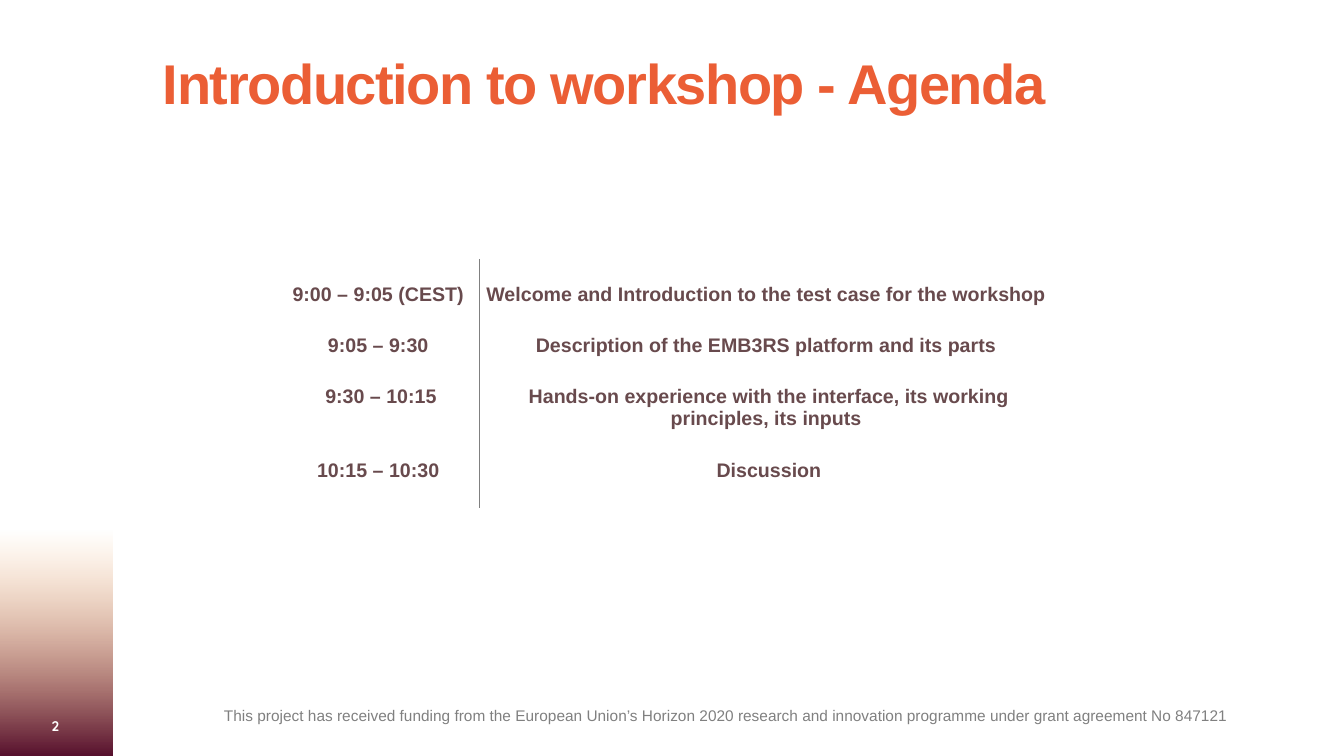
import pptx
import pptx.util
import pptx.dml.color
import pptx.enum.shapes
import pptx.enum.text
import pptx.oxml
import pptx.oxml.ns

PX = 914400 / 100.8
THEME = {
    "font": "Arial", "number_font": "Quicksand",
    "title": "EB5E35", "agenda": "684A4D", "grey": "808080",
    "white": "FFFFFF", "wine": "57102D", "amber": "F5A04B",
    "title_size": 40, "agenda_size": 14, "footer_size": 11, "number_size": 10,
}
FOOTER = ("This project has received funding from the European Union’s Horizon 2020 "
          "research and innovation programme under grant agreement No 847121")
AGENDA = [
    ("9:00 – 9:05 (CEST) ", "Welcome and Introduction to the test case for the workshop ", 72),
    ("9:05 – 9:30 ", "Description of the EMB3RS platform and its parts ", 51),
    ("9:30 – 10:15", "Hands-on experience with the interface, its working principles, its inputs ", 74),
    ("10:15 – 10:30 ", "Discussion", 51),
]
ALIGN = pptx.enum.text.PP_ALIGN
ANCHOR = pptx.enum.text.MSO_ANCHOR


def px(n):
    return pptx.util.Emu(round(n * PX))


def write(p, text, size, color, bold=True, font="font", align=ALIGN.LEFT):
    p.alignment = align
    r = p.add_run()
    r.text = text
    look = {"name": THEME[font], "size": pptx.util.Pt(THEME[size]), "bold": bold}
    for key, value in look.items():
        setattr(r.font, key, value)
    r.font.color.rgb = pptx.dml.color.RGBColor.from_string(THEME[color])
    return r


prs = pptx.Presentation()
prs.slide_width, prs.slide_height = px(1344), px(756)
s = prs.slides.add_slide(prs.slide_layouts[6])

band = s.shapes.add_shape(pptx.enum.shapes.MSO_SHAPE.RECTANGLE, px(0), px(530), px(113), px(226))
band.shadow.inherit = False
band.line.fill.background()
band.fill.gradient()
band.fill.gradient_angle = 90
for stop, color, position in zip(band.fill.gradient_stops, ("wine", "amber"), (0, 1)):
    stop.color.rgb = pptx.dml.color.RGBColor.from_string(THEME[color])
    stop.position = position
amber = band.element.xpath(".//a:gs/a:srgbClr")[-1]
amber.append(pptx.oxml.parse_xml(f'<a:alpha {pptx.oxml.ns.nsdecls("a")} val="0"/>'))

boxes = [
    ((18, 706, 75, 40), (10, 5, 10, 5), ANCHOR.MIDDLE,
     ("2", "number_size", "white", True, "number_font", ALIGN.CENTER)),
    ((224, 702, 1037, 26), (0, 4, 24, 4), ANCHOR.TOP, (FOOTER, "footer_size", "grey", False)),
    ((163, 40, 1160, 146), (0, 21, 0, 0), ANCHOR.TOP,
     ("Introduction to workshop - Agenda", "title_size", "title")),
]
for place, insets, anchor, content in boxes:
    tf = s.shapes.add_textbox(*map(px, place)).text_frame
    tf.word_wrap = True
    tf.vertical_anchor = anchor
    for side, inset in zip(("left", "top", "right", "bottom"), insets):
        setattr(tf, f"margin_{side}", px(inset))
    r = write(tf.paragraphs[0], *content)
tf.paragraphs[0].line_spacing = 0.8
r.font._element.set("spc", "-100")

frame = s.shapes.add_table(len(AGENDA), 2, px(283), px(259), px(776), px(248))
table = frame.table
table.first_row = table.horz_banding = False
frame.element.xpath(".//a:tableStyleId")[0].text = "{2D5ABB26-0587-4C30-8999-92F81FD0307C}"
for column, width in zip(table.columns, (196, 580)):
    column.width = px(width)
for i, (time, topic, height) in enumerate(AGENDA):
    table.rows[i].height = px(height)
    for j, (text, edge) in enumerate(((time, "lnR"), (topic, "lnL"))):
        cell = table.cell(i, j)
        margins = {"left": 6, "right": 6, "top": 3 if i else 25, "bottom": 24}
        for side, margin in margins.items():
            setattr(cell, f"margin_{side}", px(margin))
        cell.vertical_anchor = ANCHOR.TOP
        cell._tc.get_or_add_tcPr().append(pptx.oxml.parse_xml(
            f'<a:{edge} {pptx.oxml.ns.nsdecls("a")} w="6350"><a:solidFill>'
            f'<a:srgbClr val="{THEME["grey"]}"/></a:solidFill></a:{edge}>'))
        cell.fill.background()
        write(cell.text_frame.paragraphs[0], text, "agenda_size", "agenda", align=ALIGN.CENTER)

prs.save("out.pptx")
